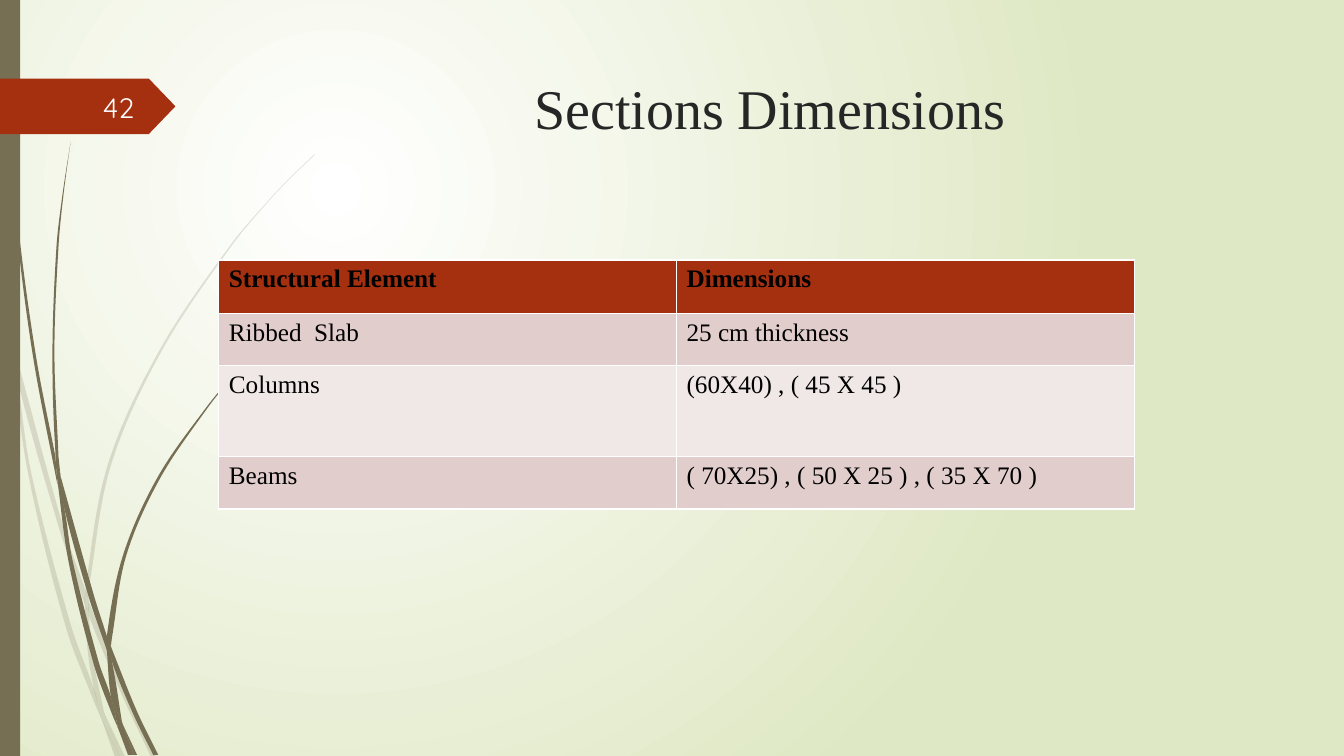
from math import dist
from lxml import etree
from pptx import Presentation
from pptx.dml.color import RGBColor
from pptx.enum.shapes import MSO_SHAPE
from pptx.enum.text import MSO_ANCHOR, PP_ALIGN
from pptx.oxml.ns import qn
from pptx.util import Inches, Pt

OLIVE = RGBColor(0x76, 0x6F, 0x54)
RUST = RGBColor(0xA5, 0x30, 0x10)
WHITE = RGBColor(0xFF, 0xFF, 0xFF)
OFF_WHITE = RGBColor(0xFE, 0xFF, 0xFF)
PALE_GREEN = RGBColor(0xDF, 0xE8, 0xC4)
ROSE = RGBColor(0xE1, 0xCD, 0xCC)
LIGHT_ROSE = RGBColor(0xF0, 0xE8, 0xE7)
CHARCOAL = RGBColor(0x26, 0x26, 0x26)
BLACK = RGBColor(0, 0, 0)


def write(tf, text, size=18, color=BLACK, font="Times New Roman", bold=False,
          align=PP_ALIGN.LEFT, anchor=MSO_ANCHOR.TOP):
    tf.word_wrap = True
    tf.vertical_anchor = anchor
    p = tf.paragraphs[0]
    p.alignment = align
    r = p.add_run()
    r.text = text
    r.font.name, r.font.size, r.font.bold = font, Pt(size), bold
    r.font.color.rgb = color


def paint(sp, color):
    sp.shadow.inherit = False
    sp.fill.solid()
    sp.fill.fore_color.rgb = color
    sp.line.fill.background()


prs = Presentation()
prs.slide_width, prs.slide_height = Inches(13.33), Inches(7.5)
s = prs.slides.add_slide(prs.slide_layouts[5])

# Background: circular gradient centred in the upper left quarter
fill = s.background.fill
fill.gradient()
for stop, color, position in zip(fill.gradient_stops, (WHITE, PALE_GREEN), (0, 1)):
    stop.color.rgb = color
    stop.position = position
grad = s.background._cSld.find(".//" + qn("a:gradFill"))
grad.remove(grad.find(qn("a:lin")))
circle = etree.SubElement(grad, qn("a:path"), {"path": "circle"})
etree.SubElement(circle, qn("a:fillToRect"),
                 {"l": "50000", "t": "50000", "r": "100000", "b": "100000"})

# Grass blades, each as two edges that run down one side and up the other
faint_blades = [
    ([(0, 2.82), (0, 2.99), (0.1, 3.44), (0.11, 3.5)], [(0.09, 3.22), (0, 2.82)]),
    ([(0.14, 3.45), (0.17, 3.76), (0.58, 5.22), (0.84, 5.99)],
     [(0.85, 5.86), (0.62, 5.2), (0.14, 3.45)]),
    ([(0.88, 5.96), (0.88, 6.1), (1.23, 6.94), (1.5, 7.51)],
     [(1.55, 7.51), (1.27, 6.92), (0.92, 6.07), (0.88, 5.96)]),
    ([(1.05, 7.11), (1.19, 7.51)], [(1.24, 7.51), (1.05, 7.11)]),
    ([(0.11, 3.5), (0.28, 4.7), (0.65, 6.21), (0.92, 6.93), (1.01, 7.14)],
     [(0.99, 7.07), (0.93, 6.83), (0.7, 6.19), (0.31, 4.69), (0.17, 3.76), (0.11, 3.5)]),
    ([(0.84, 5.99), (0.87, 6.46), (0.93, 6.83), (0.96, 6.92), (1.05, 7.11)],
     [(1.03, 7.06), (0.91, 6.46), (0.88, 6.1), (0.84, 5.99)]),
    ([(3.12, 1.53), (2.89, 1.75), (2.68, 1.97), (2.28, 2.44), (1.58, 3.48),
      (1.07, 4.61), (0.85, 5.84), (0.88, 5.96)],
     [(0.88, 5.84), (1.1, 4.62), (1.6, 3.49), (2.29, 2.45), (2.68, 1.98),
      (2.9, 1.75), (3.12, 1.54)]),
    ([(1.01, 7.14), (1.14, 7.51)], [(1.19, 7.51), (1.01, 7.14)]),
    ([(0.85, 5.86), (0.84, 5.99), (0.88, 6.08)], [(0.88, 5.96), (0.85, 5.86)]),
    ([(0.93, 6.83), (0.99, 7.07), (1.01, 7.14), (1.19, 7.51)],
     [(1.05, 7.11), (0.96, 6.92), (0.93, 6.83)]),
]
dark_blades = [
    ([(0.03, 0), (0.04, 0.48), (0.07, 1.1), (0.17, 2.33), (0.33, 3.55), (0.57, 4.81)],
     [(0.55, 4.53), (0.36, 3.55), (0.19, 2.32), (0.08, 1.09), (0.05, 0.48), (0.04, 0)]),
    ([(0.6, 4.72), (0.64, 5.05), (0.88, 5.92), (1.06, 6.45)],
     [(1.06, 6.31), (0.93, 5.9), (0.6, 4.72)]),
    ([(1.1, 6.41), (1.11, 6.56), (1.32, 7.08), (1.52, 7.49)],
     [(1.57, 7.49), (1.36, 7.06), (1.13, 6.49), (1.1, 6.41)]),
    ([(0.57, 4.77), (0.68, 5.57), (0.93, 6.59), (1.11, 7.08), (1.17, 7.22)],
     [(1.16, 7.17), (1.1, 6.91), (0.98, 6.57), (0.72, 5.56), (0.64, 5.05), (0.57, 4.77)]),
    ([(0.7, 1.41), (0.62, 1.93), (0.56, 2.45), (0.52, 3.49), (0.55, 4.49), (0.6, 4.72)],
     [(0.58, 4.53), (0.54, 3.49), (0.58, 2.45), (0.63, 1.93), (0.7, 1.41)]),
    ([(1.22, 7.19), (1.33, 7.49)], [(1.36, 7.49), (1.22, 7.19)]),
    ([(0.55, 4.49), (0.57, 4.77), (0.64, 5.05)], [(0.6, 4.72), (0.55, 4.49)]),
    ([(2.6, 3.44), (2.31, 3.73), (2.04, 4.05), (1.56, 4.74), (1.22, 5.51),
      (1.06, 6.31), (1.1, 6.41)],
     [(1.11, 6.33), (1.25, 5.52), (1.58, 4.76), (2.05, 4.06), (2.31, 3.74), (2.61, 3.44)]),
    ([(1.17, 7.22), (1.27, 7.49)], [(1.31, 7.49), (1.17, 7.22)]),
    ([(1.06, 6.45), (1.1, 6.91), (1.16, 7.06), (1.22, 7.19)],
     [(1.21, 7.16), (1.11, 6.56), (1.06, 6.45)]),
    ([(1.06, 6.31), (1.06, 6.45), (1.11, 6.56)], [(1.1, 6.41), (1.06, 6.31)]),
    ([(1.1, 6.91), (1.16, 7.17), (1.17, 7.22), (1.3, 7.49)],
     [(1.33, 7.49), (1.22, 7.19), (1.16, 7.06), (1.1, 6.91)]),
]
for blades, opacity in ((faint_blades, 20), (dark_blades, 100)):
    group = s.shapes.add_group_shape()
    for edges in blades:
        # Two handles and an end point for each smooth stretch of an edge
        outline = []
        for edge in edges:
            if outline:
                outline += [outline[-1], edge[0]]
            outline.append(edge[0])
            padded = [edge[0]] + edge + [edge[-1]]
            for a, b, c, d in zip(padded, padded[1:], padded[2:], padded[3:]):
                before = dist(b, c) / dist(a, c) / 3
                after = dist(b, c) / dist(b, d) / 3
                outline += [(b[0] + (c[0] - a[0]) * before, b[1] + (c[1] - a[1]) * before),
                            (c[0] - (d[0] - b[0]) * after, c[1] - (d[1] - b[1]) * after), c]
        points = [(Inches(x), Inches(y)) for x, y in outline]
        builder = group.shapes.build_freeform(*points[0])
        builder.add_line_segments(points[1:], close=True)
        sp = builder.convert_to_shape()
        paint(sp, OLIVE)
        # Join every three segments into one curve
        segments = list(sp._element.iter(qn("a:lnTo")))
        for i in range(0, len(points) - 1, 3):
            curve = etree.Element(qn("a:cubicBezTo"))
            segments[i].addprevious(curve)
            for segment in segments[i:i + 3]:
                curve.append(segment[0])
                segment.getparent().remove(segment)
        if opacity < 100:
            rgb = sp._element.spPr.find(".//" + qn("a:srgbClr"))
            etree.SubElement(rgb, qn("a:alpha"), {"val": str(opacity * 1000)})

# Side bar and page tag
bar = s.shapes.add_shape(MSO_SHAPE.RECTANGLE, 0, 0, Inches(0.2), prs.slide_height)
paint(bar, OLIVE)
tag = s.shapes.add_shape(MSO_SHAPE.PENTAGON, 0, Inches(0.78), Inches(1.74), Inches(0.55))
tag.adjustments[0] = 0.48
paint(tag, RUST)
number = s.shapes.add_textbox(Inches(0.58), Inches(0.86), Inches(0.85), Inches(0.4))
write(number.text_frame, "42", size=20, color=OFF_WHITE, font="Quicksand",
      align=PP_ALIGN.RIGHT, anchor=MSO_ANCHOR.MIDDLE)

# Title
title = s.shapes.title
title.left, title.top = Inches(2.83), Inches(0.68)
title.width, title.height = Inches(9.75), Inches(1.4)
write(title.text_frame, "Sections Dimensions ", size=40, color=CHARCOAL,
      align=PP_ALIGN.CENTER)

# Table of sections; the white rules come from the table style
rows = [
    ("Structural Element", "Dimensions"),
    ("Ribbed  Slab", "25 cm thickness"),
    ("Columns", "(60X40) , ( 45 X 45 )"),
    ("Beams", "( 70X25) , ( 50 X 25 ) , ( 35 X 70 )"),
]
fills = [RUST, ROSE, LIGHT_ROSE, ROSE]
heights = [0.53, 0.52, 0.9, 0.52]
table = s.shapes.add_table(len(rows), 2, Inches(2.17), Inches(2.58),
                           Inches(9.08), Inches(sum(heights))).table
for i, (texts, color, height) in enumerate(zip(rows, fills, heights)):
    table.rows[i].height = Inches(height)
    for j, text in enumerate(texts):
        cell = table.cell(i, j)
        write(cell.text_frame, text, bold=i == 0)
        cell.fill.solid()
        cell.fill.fore_color.rgb = color

prs.save("out.pptx")
